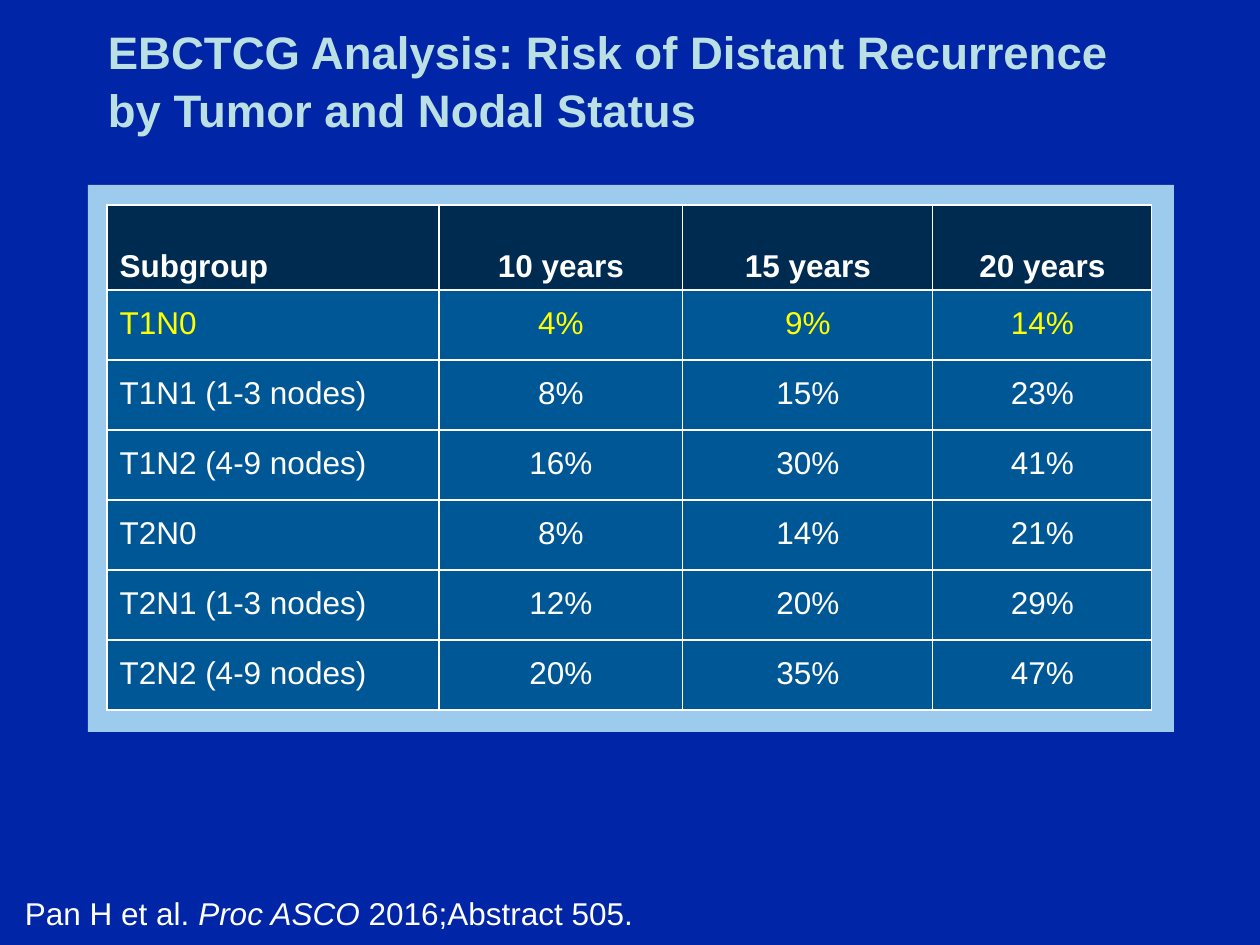
import pptx
import pptx.dml.color
import pptx.enum.shapes
import pptx.enum.text
import pptx.oxml
import pptx.oxml.ns
import pptx.util

COLORS = {
    "background": "0125A7",
    "panel": "9CCBED",
    "header": "002B51",
    "body": "005796",
    "text": "FFFFFF",
    "highlight": "FFFF00",
    "title": "BBE0E3",
}
ALIGN = pptx.enum.text.PP_ALIGN
ANCHOR = pptx.enum.text.MSO_ANCHOR

COLUMNS = [332, 244, 250, 219]
HEADER_HEIGHT, ROW_HEIGHT = 85, 70
RISKS = [
    ("Subgroup", "10 years", "15 years", "20 years"),
    ("T1N0", "4%", "9%", "14%"),
    ("T1N1 (1-3 nodes)", "8%", "15%", "23%"),
    ("T1N2 (4-9 nodes)", "16%", "30%", "41%"),
    ("T2N0", "8%", "14%", "21%"),
    ("T2N1 (1-3 nodes)", "12%", "20%", "29%"),
    ("T2N2 (4-9 nodes)", "20%", "35%", "47%"),
]


def px(n):
    return round(n * 914400 / 126)


def rgb(name):
    return pptx.dml.color.RGBColor.from_string(COLORS[name])


def apply(obj, values):
    for name, value in values.items():
        setattr(obj, name, value)


def paint(obj, color):
    obj.fill.solid()
    obj.fill.fore_color.rgb = rgb(color)


def add_run(p, text, color, **values):
    r = p.add_run()
    r.text = text
    apply(r.font, {"name": "Arial", "size": pptx.util.Pt(18), **values})
    r.font.color.rgb = rgb(color)


def add_text(s, box, anchor, margins):
    tf = s.shapes.add_textbox(*map(px, box)).text_frame
    left, top, right, bottom = map(px, margins)
    apply(tf, {
        "word_wrap": True, "vertical_anchor": anchor,
        "margin_left": left, "margin_top": top,
        "margin_right": right, "margin_bottom": bottom,
    })
    return tf.paragraphs[0]


def add_title(s, box):
    p = add_text(s, box, ANCHOR.MIDDLE, (13, 6, 13, 6))
    p.line_spacing = 1.05
    add_run(p, "EBCTCG Analysis: Risk of Distant Recurrence by Tumor and Nodal Status",
            "title", size=pptx.util.Pt(26), bold=True)


def add_borders(cell):
    tc_pr = cell._tc.get_or_add_tcPr()
    ns = pptx.oxml.ns.nsdecls("a")
    for i, side in enumerate(("lnL", "lnR", "lnT", "lnB")):
        tc_pr.insert(i, pptx.oxml.parse_xml(
            f'<a:{side} {ns} w="{pptx.util.Pt(0.75)}"><a:solidFill>'
            f'<a:srgbClr val="{COLORS["text"]}"/></a:solidFill></a:{side}>'))


def fill_cell(cell, text, row, col):
    header = row == 0
    paint(cell, "header" if header else "body")
    cell.vertical_anchor = ANCHOR.BOTTOM if header else ANCHOR.MIDDLE
    p = cell.text_frame.paragraphs[0]
    apply(p, {"alignment": ALIGN.CENTER if col else ALIGN.LEFT, "line_spacing": 0.9})
    add_run(p, text, "highlight" if row == 1 else "text", bold=header)
    add_borders(cell)


def add_risk_table(s, box):
    x, y, w, h = box
    panel = s.shapes.add_shape(pptx.enum.shapes.MSO_SHAPE.RECTANGLE, *map(px, box))
    panel.shadow.inherit = False
    paint(panel, "panel")
    panel.line.fill.background()
    heights = [HEADER_HEIGHT] + [ROW_HEIGHT] * (len(RISKS) - 1)
    table = s.shapes.add_table(
        len(RISKS), len(COLUMNS), px(x + 19), px(y + 20),
        px(sum(COLUMNS)), px(sum(heights))).table
    for column, width in zip(table.columns, COLUMNS):
        column.width = px(width)
    for i, (height, values) in enumerate(zip(heights, RISKS)):
        table.rows[i].height = px(height)
        for j, text in enumerate(values):
            fill_cell(table.cell(i, j), text, i, j)


def add_citation(s, box):
    p = add_text(s, box, ANCHOR.BOTTOM, (25, 6, 13, 13))
    add_run(p, "Pan H et al. ", "text")
    add_run(p, "Proc ASCO ", "text", italic=True)
    add_run(p, "2016;Abstract 505.", "text")


def main():
    prs = pptx.Presentation()
    apply(prs, {"slide_width": px(1260), "slide_height": px(945)})
    s = prs.slides.add_slide(prs.slide_layouts[6])
    paint(s.background, "background")
    add_risk_table(s, (88, 185, 1086, 547))
    add_citation(s, (0, 888, 1260, 57))
    add_title(s, (95, 0, 1071, 158))
    prs.save("out.pptx")


if __name__ == "__main__":
    main()
